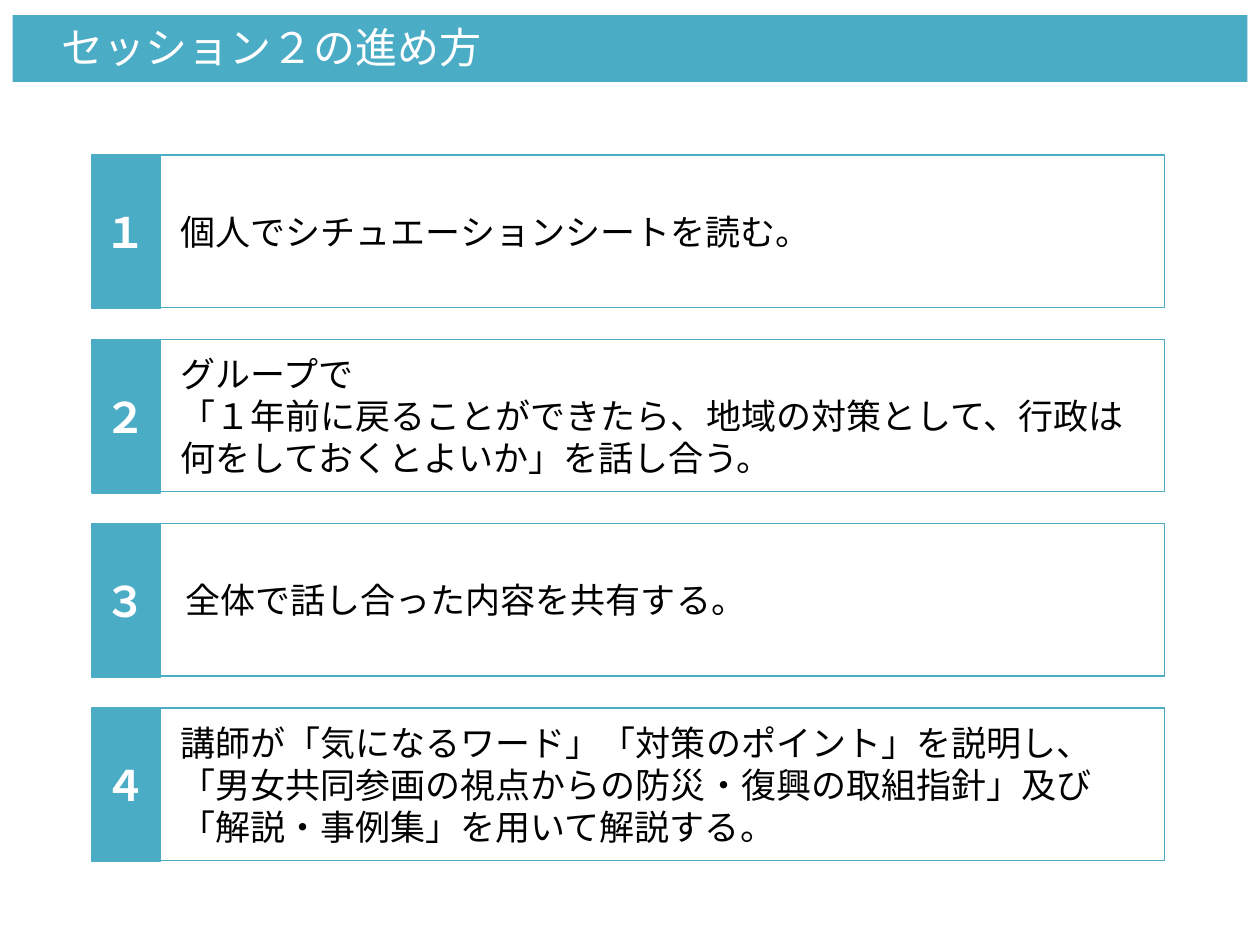
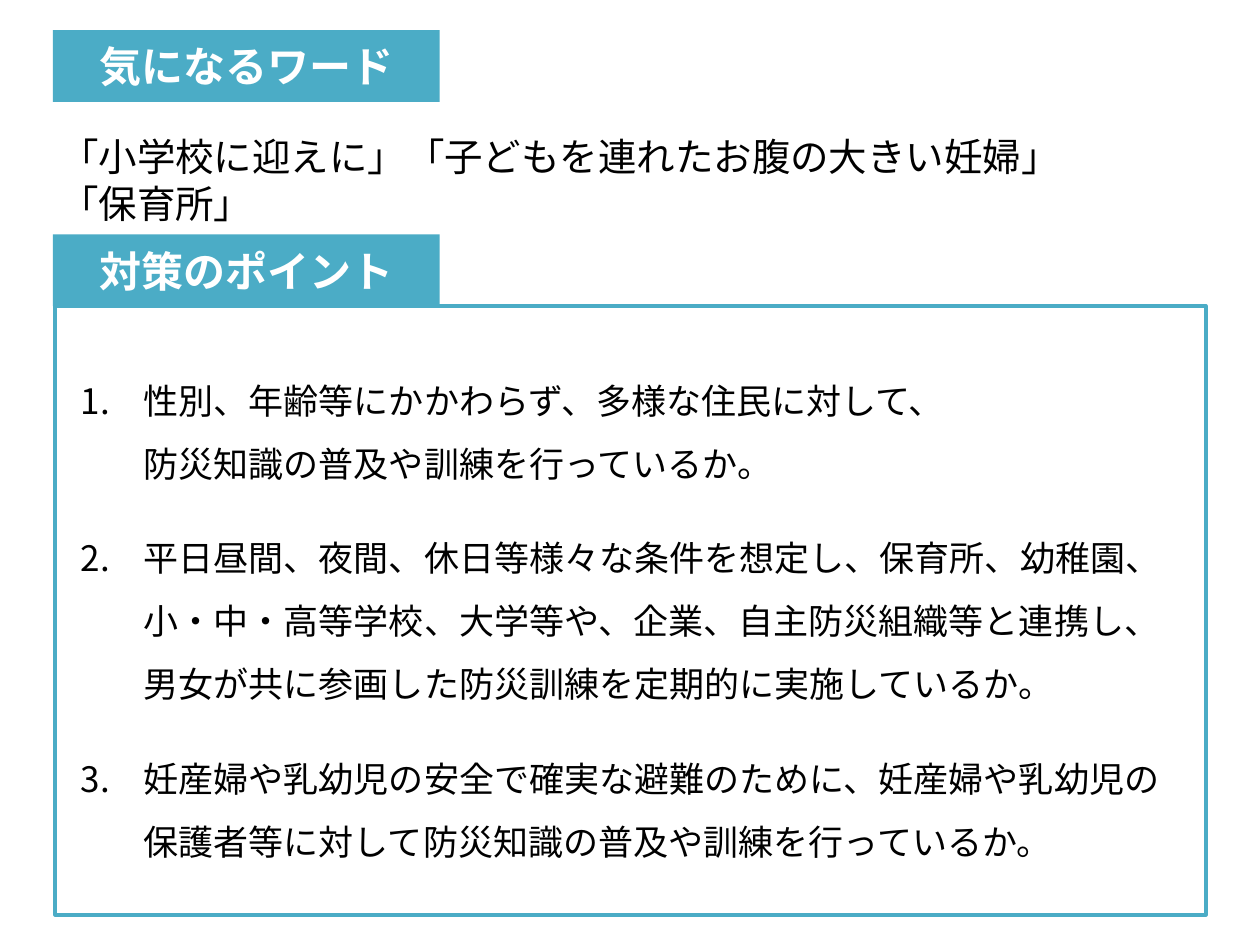
from pptx import Presentation
from pptx.dml.color import RGBColor
from pptx.enum.lang import MSO_LANGUAGE_ID
from pptx.enum.shapes import MSO_SHAPE
from pptx.enum.text import MSO_ANCHOR, PP_ALIGN
from pptx.oxml.ns import qn
from pptx.util import Inches, Pt
from lxml import etree

TEAL, WHITE, BLACK = "4BACC6", "FFFFFF", "000000"
NOTO = "Noto Sans CJK JP"

TITLE = {"name": "Arial", "size": Pt(24)}
NUMBER = {"name": "Calibri", "size": Pt(24), "bold": True}
STEP = {"name": "Calibri", "size": Pt(20)}
HEADING = {"name": NOTO, "size": Pt(24), "bold": True}
WORDS = {"name": NOTO, "size": Pt(22)}
POINT = {"name": NOTO, "size": Pt(20)}

STEPS = [
    ("１", ["個人でシチュエーションシートを読む。"], 0.2),
    ("２", ["グループで",
           "「１年前に戻ることができたら、地域の対策として、行政は何をしておくとよいか」を話し合う。"], 0.2),
    ("３", ["全体で話し合った内容を共有する。"], 0.24),
    ("４", ["講師が「気になるワード」「対策のポイント」を説明し、"
           "「男女共同参画の視点からの防災・復興の取組指針」及び「解説・事例集」を用いて解説する。"], 0.2),
]
STEP_TOP, STEP_PITCH = 1.23, (5.62 - 1.23) / 3

POINTS = [
    "性別、年齢等にかかわらず、多様な住民に対して、\n防災知識の普及や訓練を行っているか。",
    "平日昼間、夜間、休日等様々な条件を想定し、保育所、幼稚園、"
    "小・中・高等学校、大学等や、企業、自主防災組織等と連携し、\n"
    "男女が共に参画した防災訓練を定期的に実施しているか。",
    "妊産婦や乳幼児の安全で確実な避難のために、妊産婦や乳幼児の\n"
    "保護者等に対して防災知識の普及や訓練を行っているか。",
]


def rgb(color):
    return RGBColor.from_string(color)


def write(sp, paragraphs, style, color=BLACK, align=PP_ALIGN.LEFT,
          anchor=MSO_ANCHOR.MIDDLE, wrap=True, **margins):
    """Fill a shape with paragraphs; margins are margin_left etc. in inches."""
    tf = sp.text_frame
    tf.word_wrap, tf.vertical_anchor = wrap, anchor
    for side, inches in margins.items():
        setattr(tf, side, Inches(inches))
    for i, text in enumerate(paragraphs):
        p = tf.paragraphs[0] if i == 0 else tf.add_paragraph()
        p.text, p.alignment = text, align
        for r in p.runs:
            for key, value in style.items():
                setattr(r.font, key, value)
            r.font.color.rgb = rgb(color)
            r.font.language_id = MSO_LANGUAGE_ID.JAPANESE
            latin = r.font._element.find(qn("a:latin"))
            ea = etree.Element(qn("a:ea"), typeface=style["name"])
            latin.addnext(ea)
    return tf


def add_box(s, left, top, width, height, fill=None, line_width=None):
    sp = s.shapes.add_shape(MSO_SHAPE.RECTANGLE, Inches(left), Inches(top),
                            Inches(width), Inches(height))
    sp.shadow.inherit = False
    if fill:
        sp.fill.solid()
        sp.fill.fore_color.rgb = rgb(fill)
    else:
        sp.fill.background()
    if line_width:
        sp.line.color.rgb = rgb(TEAL)
        sp.line.width = Pt(line_width)
    else:
        sp.line.fill.background()
    return sp


def add_title_band(s, text):
    sp = add_box(s, 0.1, 0.12, 9.8, 0.53, TEAL)
    write(sp, [text], TITLE, WHITE, margin_left=0.39, margin_bottom=0.08)


def add_step(s, top, number, paragraphs, indent):
    body = add_box(s, 1.23, top, 8.01, 1.21, line_width=0.75)
    write(body, paragraphs, STEP, margin_left=indent)
    tab = add_box(s, 0.73, top, 0.54, 1.22, TEAL, 0.75)
    write(tab, [number], NUMBER, WHITE, PP_ALIGN.CENTER, wrap=False)


def add_heading(s, top, text):
    sp = add_box(s, 0.42, top, 3.07, 0.57, TEAL)
    write(sp, [text], HEADING, WHITE, PP_ALIGN.CENTER)


def number_paragraphs(tf):
    """Give each paragraph an automatic number and a hanging indent."""
    for p in tf.paragraphs:
        p.line_spacing, p.space_before = 1.5, Pt(18)
        pPr = p._p.get_or_add_pPr()
        pPr.set("marL", str(Inches(0.5)))
        pPr.set("indent", str(-Inches(0.5)))
        etree.SubElement(pPr, qn("a:buFont"), typeface="+mj-lt")
        etree.SubElement(pPr, qn("a:buAutoNum"), type="arabicPeriod")


def build_steps_slide(s):
    add_title_band(s, "セッション２の進め方")
    for i, step in enumerate(STEPS):
        add_step(s, STEP_TOP + i * STEP_PITCH, *step)


def build_points_slide(s):
    add_heading(s, 0.24, "気になるワード")
    frame = add_box(s, 0.44, 2.43, 9.13, 4.83, line_width=2.25)
    number_paragraphs(write(frame, POINTS, POINT, margin_left=0.2))
    add_heading(s, 1.86, "対策のポイント")
    words = s.shapes.add_textbox(Inches(0.38), Inches(1.01), Inches(9.02), Inches(0.84))
    write(words, ["「小学校に迎えに」「子どもを連れたお腹の大きい妊婦」\n「保育所」"],
          WORDS, anchor=MSO_ANCHOR.TOP)


def main():
    prs = Presentation()
    prs.slide_width, prs.slide_height = Inches(10), Inches(7.5)
    for build in (build_steps_slide, build_points_slide):
        build(prs.slides.add_slide(prs.slide_layouts[6]))
    prs.save("out.pptx")


if __name__ == "__main__":
    main()
